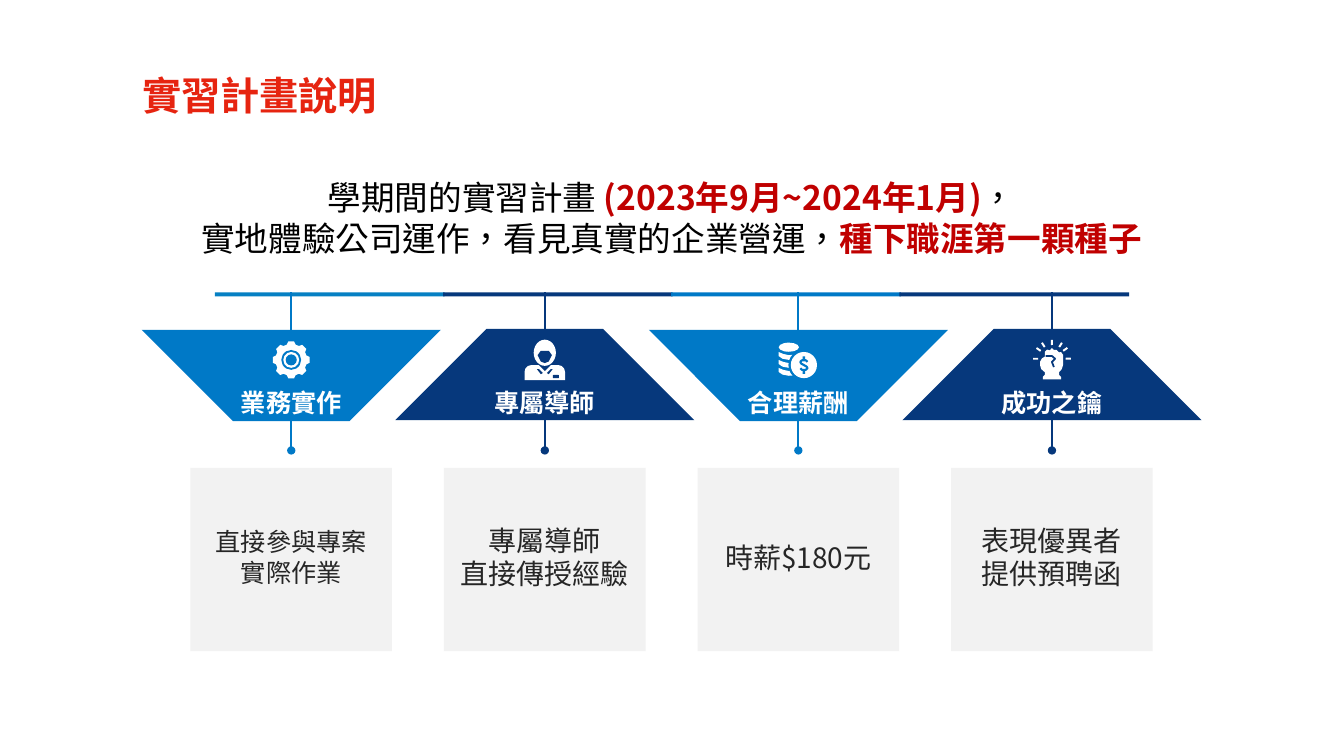
"""Build the internship programme slide with four linked topic columns."""
import math

import lxml.etree
import pptx
import pptx.dml.color
import pptx.enum.lang
import pptx.enum.shapes
import pptx.enum.text
import pptx.oxml.ns
import pptx.util

Cm = pptx.util.Cm
Pt = pptx.util.Pt
RGBColor = pptx.dml.color.RGBColor
SHAPE = pptx.enum.shapes.MSO_SHAPE
ALIGN = pptx.enum.text.PP_ALIGN
ANCHOR = pptx.enum.text.MSO_ANCHOR

WHITE = RGBColor(0xFF, 0xFF, 0xFF)
BLACK = RGBColor(0, 0, 0)
RED = RGBColor(0xE6, 0x24, 0x10)
DARK_RED = RGBColor(0xC0, 0, 0)
BLUE = RGBColor(0, 0x79, 0xC7)
BAR_BLUE = RGBColor(0x06, 0x80, 0xC3)
NAVY = RGBColor(0x06, 0x38, 0x7C)
CARD_GRAY = RGBColor(0xF2, 0xF2, 0xF2)
CHARCOAL = RGBColor(0x26, 0x26, 0x26)

BODY_FONT = "Noto Sans CJK SC"
TITLE_FONT = "Noto Sans CJK TC"
FIRST_CENTER, COLUMN_PITCH = 7.34, 6.39
ICON_MIDDLE = 9.07


def add_span(para, text, size, color, bold=False, name=BODY_FONT):
    """Add one formatted run of Traditional Chinese text."""
    span = para.add_run()
    span.text = text
    font = span.font
    font.size, font.bold, font.name = Pt(size), bold, name
    font.color.rgb = color
    font.language_id = pptx.enum.lang.MSO_LANGUAGE_ID.TRADITIONAL_CHINESE
    east_asian = lxml.etree.SubElement(span._r.rPr, pptx.oxml.ns.qn("a:ea"))
    east_asian.set("typeface", name)


def write_lines(frame, lines, size, align=ALIGN.CENTER, name=BODY_FONT):
    """Fill a frame with paragraphs of (text, color, bold) spans."""
    for index, spans in enumerate(lines):
        para = frame.add_paragraph() if index else frame.paragraphs[0]
        para.alignment = align
        para.space_before = Pt(0)
        para.line_spacing = Pt(size * 1.2)
        for text, color, bold in spans:
            add_span(para, text, size, color, bold, name)


def add_text(page, left, top, width, height, lines, size, wrap=True):
    """Add a centred text box."""
    box = page.shapes.add_textbox(Cm(left), Cm(top), Cm(width), Cm(height))
    box.text_frame.word_wrap = wrap
    box.text_frame.vertical_anchor = ANCHOR.MIDDLE
    write_lines(box.text_frame, lines, size)


def paint(shape, color):
    """Give a shape a flat fill without outline or shadow."""
    shape.shadow.inherit = False
    shape.fill.solid()
    shape.fill.fore_color.rgb = color
    shape.line.fill.background()


def add_block(shapes, kind, center, middle, width, height, color, rotation=0):
    """Add a flat preset shape placed by its centre."""
    block = shapes.add_shape(kind, Cm(center - width / 2), Cm(middle - height / 2),
                             Cm(width), Cm(height))
    paint(block, color)
    block.rotation = rotation
    return block


def add_outline(shapes, center, points, color, stroke=None):
    """Add a filled polygon, or an open stroke, around an icon centre."""
    corners = [(Cm(center + x), Cm(ICON_MIDDLE + y)) for x, y in points]
    builder = shapes.build_freeform(*corners[0])
    builder.add_line_segments(corners[1:], close=stroke is None)
    outline = builder.convert_to_shape()
    paint(outline, color)
    if stroke:
        outline.fill.background()
        outline.line.color.rgb = color
        outline.line.width = Pt(stroke)


def add_pin(page, center, color):
    """Add the vertical line that ends in a dot."""
    pin = page.shapes.add_connector(pptx.enum.shapes.MSO_CONNECTOR.STRAIGHT,
                                    Cm(center), Cm(7.37), Cm(center), Cm(11.35))
    pin.line.color.rgb = color
    pin.line.width = Pt(1.5)
    tail = lxml.etree.SubElement(pin.line._get_or_add_ln(), pptx.oxml.ns.qn("a:tailEnd"))
    tail.set("type", "oval")
    lxml.etree.SubElement(pin._element.spPr, pptx.oxml.ns.qn("a:effectLst"))


def draw_gear(shapes, center, color):
    """Draw an eight-toothed gear."""
    teeth = []
    for tooth in range(8):
        for offset, radius in ((-16, 0.4), (-9, 0.47), (9, 0.47), (16, 0.4)):
            angle = math.radians(45 * tooth + offset)
            teeth.append((radius * math.sin(angle), -radius * math.cos(angle)))
    add_outline(shapes, center, teeth, WHITE)
    for size, shade in ((0.5, color), (0.4, WHITE), (0.28, color)):
        add_block(shapes, SHAPE.OVAL, center, ICON_MIDDLE, size, size, shade)


def draw_mentor(shapes, center, color):
    """Draw the head and shoulders of a mentor."""
    add_block(shapes, SHAPE.ROUND_2_SAME_RECTANGLE, center, ICON_MIDDLE + 0.32,
              1.02, 0.38, WHITE).adjustments[0] = 0.45
    add_outline(shapes, center, [(-0.15, 0.13), (0.15, 0.13), (0, 0.28)], color)
    add_block(shapes, SHAPE.OVAL, center, ICON_MIDDLE - 0.18, 0.56, 0.66, WHITE)
    add_outline(shapes, center, [(-0.18, -0.12), (-0.1, -0.23), (0.1, -0.23), (0.18, -0.12),
                                 (0.1, 0.04), (0, 0.08), (-0.1, 0.04)], color)
    for side in (-1, 1):
        collar = [(0.15, 0.23), (0.05, 0.33), (0.1, 0.36), (0.2, 0.23)]
        add_outline(shapes, center, [(side * x, y) for x, y in collar], color)
    add_block(shapes, SHAPE.ROUNDED_RECTANGLE, center + 0.28, ICON_MIDDLE + 0.42,
              0.15, 0.08, color)


def draw_coins(shapes, center, color):
    """Draw a stack of coins behind a dollar coin."""
    add_block(shapes, SHAPE.OVAL, center - 0.24, ICON_MIDDLE - 0.32, 0.51, 0.23, WHITE)
    band = [(-0.5, 0), (-0.38, 0.05), (-0.24, 0.08), (-0.12, 0.07), (-0.12, 0.19),
            (-0.24, 0.2), (-0.4, 0.17), (-0.5, 0.1)]
    for drop in (-0.2, 0, 0.2):
        add_outline(shapes, center, [(x, y + drop) for x, y in band], WHITE)
    coin_center, coin_middle = center + 0.14, ICON_MIDDLE + 0.13
    for size, shade in ((0.78, color), (0.66, WHITE)):
        add_block(shapes, SHAPE.OVAL, coin_center, coin_middle, size, size, shade)
    add_outline(shapes, center, [(0.23, 0.05), (0.19, 0.01), (0.09, 0.01), (0.05, 0.05),
                                 (0.07, 0.09), (0.21, 0.17), (0.23, 0.21), (0.19, 0.25),
                                 (0.09, 0.25), (0.05, 0.21)], color, 1.5)
    for offset in (-0.17, 0.17):
        add_block(shapes, SHAPE.RECTANGLE, coin_center, coin_middle + offset, 0.06, 0.1, color)


def draw_fist(shapes, center, color):
    """Draw a raised fist under a fan of rays."""
    for degrees in (-90, -55, -32, 0, 32, 55, 90):
        angle = math.radians(degrees)
        add_block(shapes, SHAPE.ROUNDED_RECTANGLE, center + 0.41 * math.sin(angle),
                  ICON_MIDDLE - 0.03 - 0.41 * math.cos(angle), 0.05, 0.13, WHITE, degrees)
    add_outline(shapes, center, [
        (-0.18, -0.2), (-0.12, -0.26), (-0.05, -0.24), (0, -0.3), (0.05, -0.25), (0.12, -0.25),
        (0.18, -0.19), (0.23, -0.2), (0.28, -0.13), (0.28, 0.13), (0.25, 0.23), (0.18, 0.31),
        (0.18, 0.38), (0.23, 0.43), (0.23, 0.49), (-0.23, 0.49), (-0.23, 0.43), (-0.18, 0.38),
        (-0.18, 0.31), (-0.27, 0.23), (-0.3, 0.13), (-0.3, 0.05), (-0.25, -0.04),
        (-0.18, -0.08)], WHITE)
    add_outline(shapes, center, [(-0.16, -0.1), (0, -0.1), (0.08, -0.03), (0, 0.05),
                                 (0.05, 0.18)], color, 1.25)


COLUMNS = [
    ("業務實作", ["直接參與專案", "實際作業"], 18, BLUE, BAR_BLUE, draw_gear),
    ("專屬導師", ["專屬導師", "直接傳授經驗"], 20, NAVY, NAVY, draw_mentor),
    ("合理薪酬", ["時薪$180元"], 20, BLUE, BLUE, draw_coins),
    ("成功之鑰", ["表現優異者", "提供預聘函"], 20, NAVY, NAVY, draw_fist),
]


def add_column(page, index, label, caption, size, color, bar_color, draw_icon):
    """Add one topic: stripe, card, bar, pin, label, caption and icon."""
    center = FIRST_CENTER + COLUMN_PITCH * index
    middle, rotation = (10.59, 45) if index % 2 else (8.31, 225)
    stripe = add_block(page.shapes, SHAPE.DIAGONAL_STRIPE, center, middle, 5.33, 5.33,
                       color, rotation)
    stripe.adjustments[0] = 0.39
    add_block(page.shapes, SHAPE.RECTANGLE, center, 14.1, 5.08, 4.62, CARD_GRAY)
    add_block(page.shapes, SHAPE.RECTANGLE, 8.31 + 5.75 * index, 7.42, 5.79, 0.1, bar_color)
    add_pin(page, center, color)
    add_text(page, center - 1.53, 9.62, 3.06, 1.02, [[(label, WHITE, True)]], 18, wrap=False)
    add_text(page, center - 2.7, 12.55, 5.4, 2.97,
             [[(line, CHARCOAL, False)] for line in caption], size)
    draw_icon(page.shapes.add_group_shape().shapes, center, color)


def main():
    """Create the deck and save it."""
    deck = pptx.Presentation()
    deck.slide_width, deck.slide_height = Cm(33.87), Cm(19.05)
    page = deck.slides.add_slide(deck.slide_layouts[5])
    title = page.shapes.title
    title.left, title.top, title.width, title.height = Cm(3.33), Cm(1.68), Cm(12.62), Cm(1.22)
    title.text_frame.vertical_anchor = ANCHOR.TOP
    write_lines(title.text_frame, [[("實習計畫說明", RED, True)]], 28, ALIGN.LEFT, TITLE_FONT)
    add_text(page, 2.51, 4.47, 28.83, 2.03, [
        [("學期間的實習計畫 ", BLACK, False), ("(2023年9月~2024年1月)", DARK_RED, True),
         ("，", BLACK, False)],
        [("實地體驗公司運作，看見真實的企業營運，", BLACK, False),
         ("種下職涯第一顆種子", DARK_RED, True)]], 24)
    for index, column in enumerate(COLUMNS):
        add_column(page, index, *column)
    deck.save("out.pptx")


if __name__ == "__main__":
    main()
